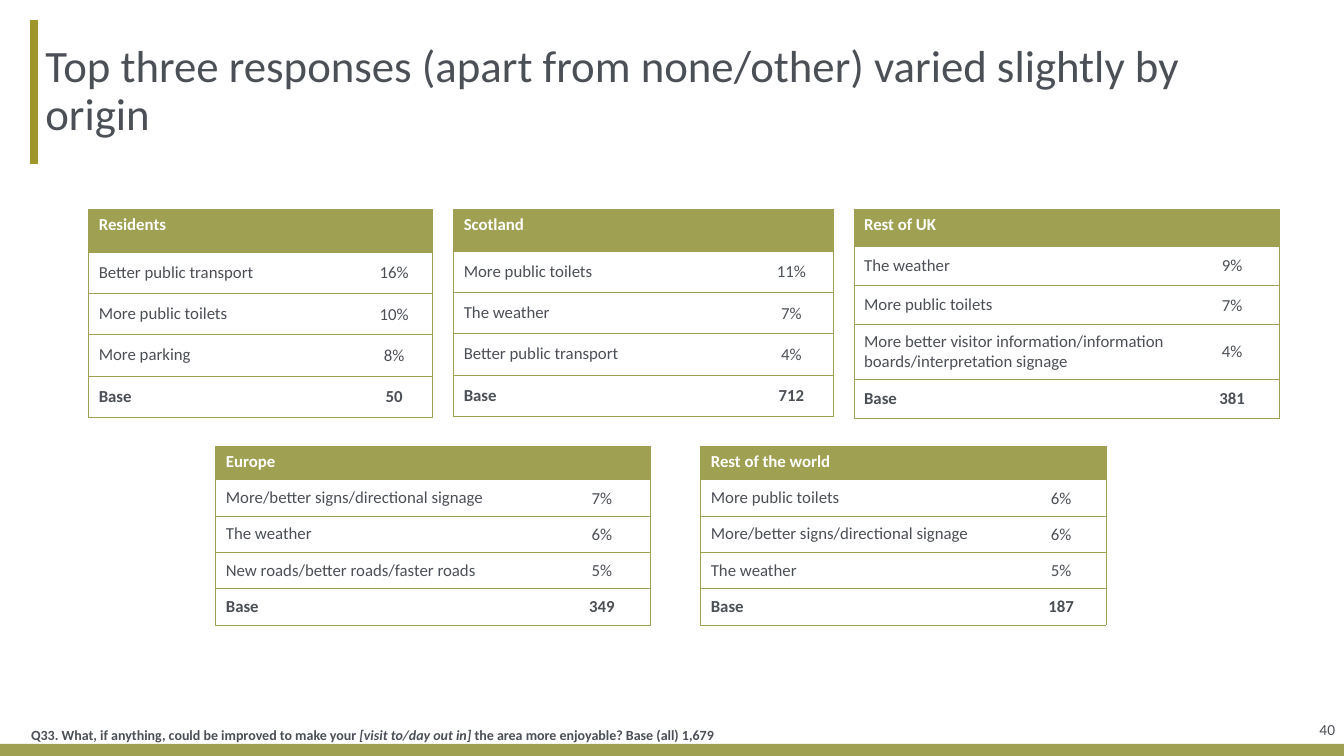
from dataclasses import dataclass
from typing import Any

from lxml.etree import SubElement
from pptx import Presentation
from pptx.dml.color import RGBColor
from pptx.enum.shapes import MSO_CONNECTOR as Connector, MSO_SHAPE as Shape
from pptx.enum.text import MSO_ANCHOR as Anchor, PP_ALIGN as Align
from pptx.oxml import parse_xml
from pptx.oxml.ns import nsdecls, qn
from pptx.util import Inches, Pt

OLIVE = RGBColor(0x9F, 0xA0, 0x52)
ACCENT = RGBColor(0x9F, 0x96, 0x2B)
SLATE = RGBColor(0x4B, 0x4F, 0x56)
WHITE = RGBColor(0xFF, 0xFF, 0xFF)

LABEL_CELL = dict(margin_left=0.1, margin_top=0.05, margin_right=0.1, margin_bottom=0.05)
SHARE_CELL = dict(margin_left=0.01, margin_top=0.01, margin_right=0.01, margin_bottom=0)
NO_MARGINS = dict(margin_left=0, margin_top=0, margin_right=0, margin_bottom=0)


@dataclass
class OriginTable:
    origin: str
    left: float
    top: float
    columns: tuple[float, float]
    heights: list[float]
    answers: list[tuple[str, str]]
    base: str


@dataclass
class Caption:
    box: tuple[float, float, float, float]
    runs: list[tuple[str, dict[str, Any]]]
    size: float
    anchor: Anchor
    align: Align = Align.LEFT
    line_spacing: float = 1.0
    margins: dict[str, float] | None = None


ORIGINS = [
    OriginTable("Residents", 0.88, 2.08, (2.65, 0.76), [0.42] + [0.41] * 4,
                [("Better public transport", "16%"), ("More public toilets", "10%"),
                 ("More parking", "8%")], "50"),
    OriginTable("Scotland", 4.5, 2.08, (2.93, 0.84), [0.41] * 5,
                [("More public toilets", "11%"), ("The weather", "7%"),
                 ("Better public transport", "4%")], "712"),
    OriginTable("Rest of UK", 8.47, 2.08, (3.28, 0.94), [0.36, 0.39, 0.39, 0.54, 0.39],
                [("The weather", "9%"), ("More public toilets", "7%"),
                 ("More better visitor information/information "
                  "boards/interpretation signage", "4%")], "381"),
    OriginTable("Europe", 2.14, 4.43, (3.35, 0.96), [0.33] + [0.36] * 4,
                [("More/better signs/directional signage", "7%"), ("The weather", "6%"),
                 ("New roads/better roads/faster roads", "5%")], "349"),
    OriginTable("Rest of the world", 6.95, 4.43, (3.13, 0.89), [0.33] + [0.36] * 4,
                [("More public toilets", "6%"), ("More/better signs/directional signage", "6%"),
                 ("The weather", "5%")], "187"),
]

CAPTIONS = [
    Caption((12.42, 6.95, 0.92, 0.58), [("40", {})], 11, Anchor.MIDDLE, Align.RIGHT),
    Caption((0.37, 0.2, 11.65, 1.42),
            [("Top three responses (apart from none/other) varied slightly by origin", {})],
            32, Anchor.MIDDLE, line_spacing=0.9, margins=NO_MARGINS | {"margin_left": 0.08}),
    Caption((0.21, 7.16, 12.21, 0.26),
            [("Q33. What, if anything, could be improved to make your ", {"bold": True}),
             ("[visit to/day out in]", {"bold": True, "italic": True}),
             (" the area more enjoyable? Base (all) 1,679", {"bold": True})],
            10, Anchor.BOTTOM),
]


def apply(target: Any, values: dict[str, Any]) -> None:
    for name, value in values.items():
        setattr(target, name, value)


def set_margins(target: Any, margins: dict[str, float]) -> None:
    apply(target, {side: Inches(gap) for side, gap in margins.items()})


def add_run(paragraph: Any, text: str, size: float, colour: RGBColor,
            **style: Any) -> None:
    run = paragraph.add_run()
    run.text = text
    apply(run.font, {"name": "Calibri", "size": Pt(size), **style})
    run.font.color.rgb = colour


def add_caption(slide: Any, caption: Caption) -> None:
    frame = slide.shapes.add_textbox(*map(Inches, caption.box)).text_frame
    apply(frame, {"word_wrap": True, "vertical_anchor": caption.anchor})
    set_margins(frame, caption.margins or LABEL_CELL)
    paragraph = frame.paragraphs[0]
    apply(paragraph, {"alignment": caption.align, "line_spacing": caption.line_spacing})
    for text, style in caption.runs:
        add_run(paragraph, text, caption.size, SLATE, **style)


def set_borders(cell: Any, inner_side: str) -> None:
    """Rule every side of the cell except the one between the columns."""
    properties = cell._tc.get_or_add_tcPr()
    for position, side in enumerate("LRTB"):
        paint = ("<a:noFill/>" if side == inner_side else
                 f'<a:solidFill><a:srgbClr val="{OLIVE}"/></a:solidFill>')
        properties.insert(position, parse_xml(
            f'<a:ln{side} {nsdecls("a")} w="{Pt(0.5)}">{paint}</a:ln{side}>'))


def add_origin_table(slide: Any, origin: OriginTable) -> None:
    rows = [(origin.origin, ""), *origin.answers, ("Base", origin.base)]
    table = slide.shapes.add_table(
        len(rows), 2, Inches(origin.left), Inches(origin.top),
        Inches(sum(origin.columns)), Inches(sum(origin.heights))).table
    table.horz_banding = False
    for column, width in zip(table.columns, origin.columns):
        column.width = Inches(width)
    for row, height in zip(table.rows, origin.heights):
        row.height = Inches(height)

    for row_index, row in enumerate(rows):
        header = row_index == 0
        for column_index, text in enumerate(row):
            cell = table.cell(row_index, column_index)
            share = column_index == 1 and not header
            set_margins(cell, SHARE_CELL if share else LABEL_CELL)
            cell.vertical_anchor = Anchor.TOP if header else Anchor.MIDDLE
            cell.fill.solid()
            cell.fill.fore_color.rgb = OLIVE if header else WHITE
            set_borders(cell, "LR"[1 - column_index])
            paragraph = cell.text_frame.paragraphs[0]
            paragraph.alignment = Align.CENTER if share else Align.LEFT
            if text:
                add_run(paragraph, text, 12, WHITE if header else SLATE,
                        bold=header or row_index == len(rows) - 1)
            else:
                SubElement(paragraph._p, qn("a:endParaRPr"), sz="1200")


def main() -> None:
    deck = Presentation()
    apply(deck, {"slide_width": Inches(13.33), "slide_height": Inches(7.5)})
    slide = deck.slides.add_slide(deck.slide_layouts[6])

    # Footer band
    footer = slide.shapes.add_shape(
        Shape.RECTANGLE, 0, Inches(7.38), Inches(13.33), Inches(0.15))
    footer.shadow.inherit = False
    footer.fill.solid()
    footer.fill.fore_color.rgb = OLIVE
    footer.line.fill.background()

    # Bar beside the title
    title_bar = slide.shapes.add_connector(
        Connector.STRAIGHT, Inches(0.34), Inches(0.2), Inches(0.34), Inches(1.63))
    title_bar.line.color.rgb = ACCENT
    title_bar.line.width = Pt(6)
    SubElement(title_bar._element.spPr, qn("a:effectLst"))

    # Page number, title and question
    for caption in CAPTIONS:
        add_caption(slide, caption)

    # Top answers by origin
    for origin in ORIGINS:
        add_origin_table(slide, origin)

    deck.save("out.pptx")


if __name__ == "__main__":
    main()
